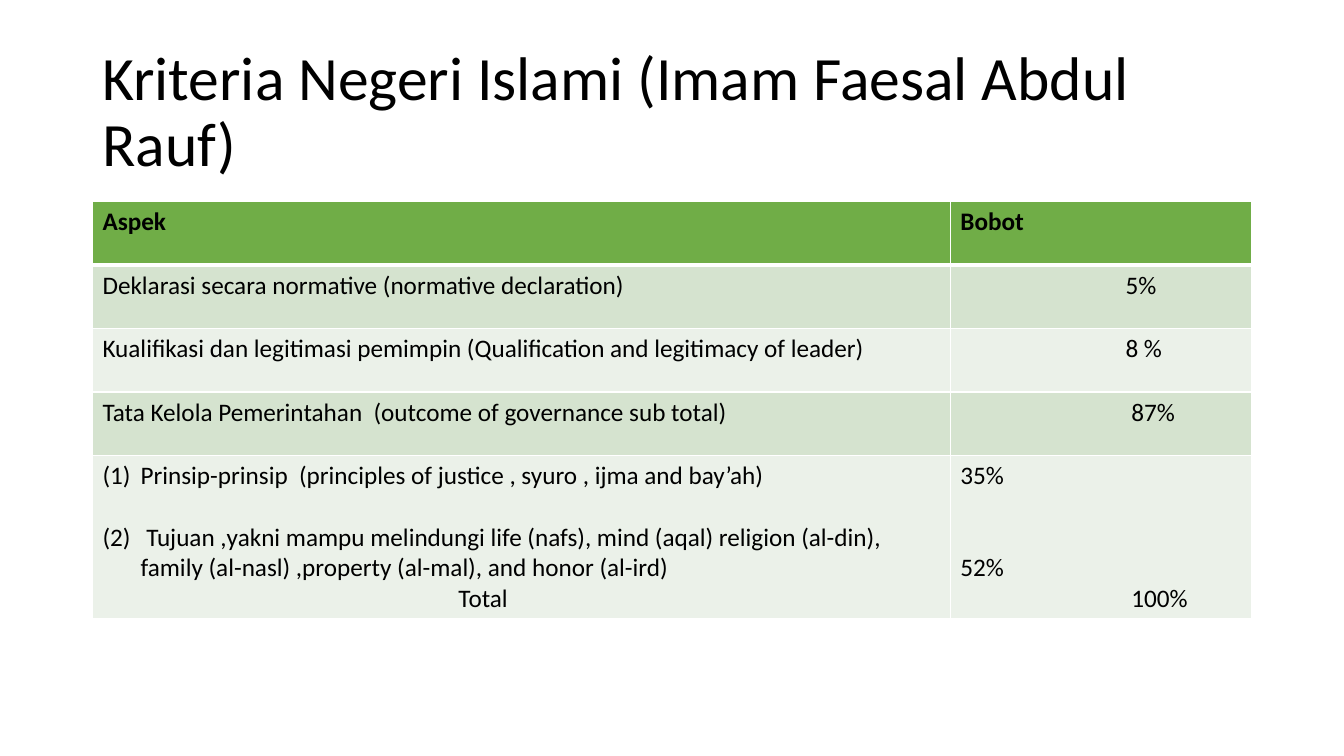
from dataclasses import dataclass

import pptx
import pptx.dml.color
import pptx.enum.text
import pptx.oxml
import pptx.oxml.ns
import pptx.util
from pptx.util import Cm


@dataclass(frozen=True)
class Theme:
    font: str = "Calibri"
    ink: str = "000000"
    line: str = "FFFFFF"
    head: str = "70AD47"
    dark: str = "D5E3CF"
    light: str = "EBF1E9"
    title: int = 44
    body: int = 18
    gap: int = 22


@dataclass(frozen=True)
class Para:
    text: str
    left: float = 0
    hang: float = 0
    skip: int = 0
    bold: bool = False


@dataclass(frozen=True)
class Row:
    fill: str
    high: float
    cells: tuple[tuple[Para, ...], ...]
    edge: int = 1


THEME = Theme()
LEFT, WIDE = 2.33, 29.21
COLS = (21.62, 7.59)
HIGH = 1.6
STEP = 0.96
ROWS = (
    Row(THEME.head, HIGH, ((Para("Aspek", bold=True),), (Para("Bobot", bold=True),)), 3),
    Row(THEME.dark, HIGH, (
        (Para("Deklarasi secara normative (normative declaration)"),),
        (Para("5%", 4.16),))),
    Row(THEME.light, HIGH, (
        (Para("Kualifikasi dan legitimasi pemimpin (Qualification and legitimacy of leader)"),),
        (Para("8 %", 4.16),))),
    Row(THEME.dark, HIGH, (
        (Para("Tata Kelola Pemerintahan  (outcome of governance sub total)"),),
        (Para("87%", 4.31),))),
    Row(THEME.light, 4.1, (
        (Para("Prinsip-prinsip  (principles of justice , syuro , ijma and bay’ah)", STEP, STEP),
         Para(" Tujuan ,yakni mampu melindungi life (nafs), mind (aqal) religion (al-din), "
              "family (al-nasl) ,property (al-mal), and honor (al-ird)", STEP, STEP, 1),
         Para("Total", 8.97)),
        (Para("35%"), Para("52%", skip=2), Para("100%", 4.31)))),
)


def paint(font: pptx.text.text.Font, size: int, bold: bool) -> None:
    form = {"name": THEME.font, "size": pptx.util.Pt(size), "bold": bold}
    for name, value in form.items():
        setattr(font, name, value)
    font.color.rgb = pptx.dml.color.RGBColor.from_string(THEME.ink)


def write(frame: pptx.text.text.TextFrame, paras: tuple[Para, ...]) -> None:
    for spot, item in enumerate(paras):
        para = frame.add_paragraph() if spot else frame.paragraphs[0]
        run = para.add_run()
        run.text = item.text
        paint(run.font, THEME.body, item.bold)
        para.space_before = pptx.util.Pt(item.skip * THEME.gap)
        props = para._p.get_or_add_pPr()
        props.set("marL", str(Cm(item.left)))
        props.set("indent", str(Cm(-item.hang)))
        if item.hang:
            mark = pptx.oxml.parse_xml(
                f'<a:buAutoNum {pptx.oxml.ns.nsdecls("a")} type="arabicParenBoth"/>')
            props.append(mark)


def edge(cell: pptx.table._Cell, top: int, base: int) -> None:
    props = cell._tc.get_or_add_tcPr()
    sides = {"L": 1, "R": 1, "T": top, "B": base}
    for spot, (side, width) in enumerate(sides.items()):
        line = pptx.oxml.parse_xml(
            f'<a:ln{side} {pptx.oxml.ns.nsdecls("a")} w="{pptx.util.Pt(width)}">'
            f'<a:solidFill><a:srgbClr val="{THEME.line}"/></a:solidFill></a:ln{side}>')
        props.insert(spot, line)


def head(slide: pptx.slide.Slide) -> None:
    box = slide.shapes.add_textbox(Cm(LEFT), Cm(1.02), Cm(WIDE), Cm(3.68))
    frame = box.text_frame
    form = {"word_wrap": True, "vertical_anchor": pptx.enum.text.MSO_ANCHOR.MIDDLE}
    for name, value in form.items():
        setattr(frame, name, value)
    para = frame.paragraphs[0]
    para.line_spacing = 0.9
    run = para.add_run()
    run.text = "Kriteria Negeri Islami (Imam Faesal Abdul Rauf)"
    paint(run.font, THEME.title, False)


def grid(slide: pptx.slide.Slide) -> None:
    total = sum(row.high for row in ROWS)
    table = slide.shapes.add_table(
        len(ROWS), len(COLS), Cm(LEFT), Cm(5.08), Cm(WIDE), Cm(total)).table
    for col, width in zip(table.columns, COLS):
        col.width = Cm(width)
    top = 1
    for y, row in enumerate(ROWS):
        table.rows[y].height = Cm(row.high)
        for x, paras in enumerate(row.cells):
            cell = table.cell(y, x)
            cell.fill.solid()
            cell.fill.fore_color.rgb = pptx.dml.color.RGBColor.from_string(row.fill)
            edge(cell, top, row.edge)
            write(cell.text_frame, paras)
        top = row.edge


def main() -> None:
    deck = pptx.Presentation()
    size = {"slide_width": Cm(33.87), "slide_height": Cm(19.05)}
    for name, value in size.items():
        setattr(deck, name, value)
    slide = deck.slides.add_slide(deck.slide_layouts[6])
    head(slide)
    grid(slide)
    deck.save("out.pptx")


if __name__ == "__main__":
    main()
